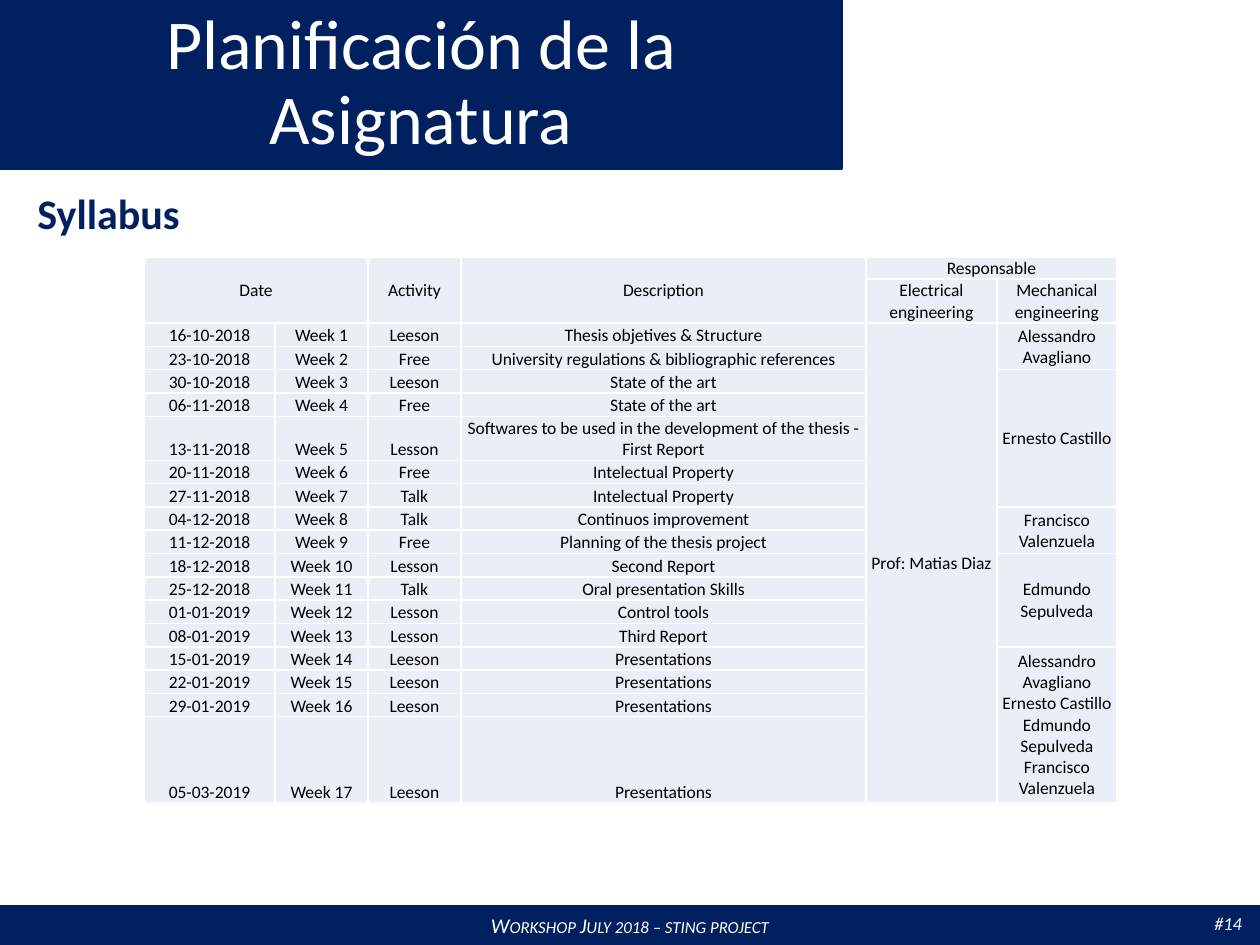
import lxml.etree
import pptx
import pptx.dml.color
import pptx.enum.shapes
import pptx.enum.text
import pptx.oxml.ns
import pptx.util

EMU_PER_PX = 914400 / 126
FONT = "Calibri"
COLOURS = {"navy": "002060", "white": "FFFFFF", "black": "000000", "cell": "EAEFF7"}
ALIGN = pptx.enum.text.PP_ALIGN
ANCHOR = pptx.enum.text.MSO_ANCHOR

COLUMN_WIDTHS = [131, 93, 93, 405, 131, 120]
SINGLE_ROW = 350 / 15  # the fifteen one-line weeks share 350 px
ROW_HEIGHTS = [21, 44] + [SINGLE_ROW] * 4 + [44] + [SINGLE_ROW] * 11 + [86]
FIRST_WEEK_ROW = 2

WEEKS = [
    ("16-10-2018", "Leeson", "Thesis objetives & Structure"),
    ("23-10-2018", "Free", "University regulations & bibliographic references"),
    ("30-10-2018", "Leeson", "State of the art"),
    ("06-11-2018", "Free", "State of the art"),
    ("13-11-2018", "Lesson",
     "Softwares to be used in the development of the thesis - First Report"),
    ("20-11-2018", "Free", "Intelectual Property"),
    ("27-11-2018", "Talk", "Intelectual Property"),
    ("04-12-2018", "Talk", "Continuos improvement"),
    ("11-12-2018", "Free", "Planning of the thesis project"),
    ("18-12-2018", "Lesson", "Second Report"),
    ("25-12-2018", "Talk", "Oral presentation Skills"),
    ("01-01-2019", "Lesson", "Control tools"),
    ("08-01-2019", "Lesson", "Third Report"),
    ("15-01-2019", "Leeson", "Presentations"),
    ("22-01-2019", "Leeson", "Presentations"),
    ("29-01-2019", "Leeson", "Presentations"),
    ("05-03-2019", "Leeson", "Presentations"),
]

# Name and number of weeks, from the first week down
MECHANICAL_STAFF = [
    ("Alessandro Avagliano", 2),
    ("Ernesto Castillo", 5),
    ("Francisco Valenzuela", 2),
    ("Edmundo Sepulveda", 4),
    ("Alessandro Avagliano Ernesto Castillo Edmundo Sepulveda Francisco Valenzuela", 4),
]


def px(length):
    return pptx.util.Emu(round(length * EMU_PER_PX))


def colour(name):
    return pptx.dml.color.RGBColor.from_string(COLOURS[name])


def write(frame, text, size, colour_name, align=ALIGN.LEFT, bold=False, italic=False):
    """Fill a text frame with one formatted paragraph and return it."""
    para = frame.paragraphs[0]
    para.text = text
    para.alignment = align
    para.font.name = FONT
    para.font.size = pptx.util.Pt(size)
    para.font.bold = bold
    para.font.italic = italic
    para.font.color.rgb = colour(colour_name)
    return para


def add_band(slide, left, top, width, height):
    band = slide.shapes.add_shape(
        pptx.enum.shapes.MSO_SHAPE.RECTANGLE, px(left), px(top), px(width), px(height))
    band.shadow.inherit = False
    band.fill.solid()
    band.fill.fore_color.rgb = colour("navy")
    band.line.color.rgb = colour("navy")
    band.line.width = pptx.util.Pt(1)
    return band


def add_label(slide, left, top, width, height, text, size, colour_name, **style):
    box = slide.shapes.add_textbox(px(left), px(top), px(width), px(height))
    box.text_frame.word_wrap = False
    write(box.text_frame, text, size, colour_name, **style)


def add_title(slide, text):
    add_band(slide, 0, 0, 842, 169)
    title = slide.shapes.title
    slide.shapes._spTree.append(title._element)  # bring in front of the band
    title.left, title.top, title.width, title.height = px(0), px(0), px(842), px(169)
    frame = title.text_frame
    frame.auto_size = pptx.enum.text.MSO_AUTO_SIZE.NONE
    frame.word_wrap = True
    frame.vertical_anchor = ANCHOR.MIDDLE
    write(frame, text, 40, "white", ALIGN.CENTER).line_spacing = 0.9


def add_footer(slide, text, page_number):
    band = add_band(slide, 0, 906, 1260, 39)
    band.text_frame.vertical_anchor = ANCHOR.MIDDLE
    para = write(band.text_frame, text, 12, "white", ALIGN.CENTER, italic=True)
    para.runs[0].font._element.set("cap", "small")
    add_label(slide, 1202, 906, 67, 35, page_number, 10.5, "white", italic=True)


def style_cell(cell):
    cell.margin_left = cell.margin_right = cell.margin_top = px(1)
    cell.margin_bottom = 0
    properties = cell._tc.get_or_add_tcPr()
    for side in ("a:lnL", "a:lnR", "a:lnT", "a:lnB"):
        line = lxml.etree.SubElement(
            properties, pptx.oxml.ns.qn(side), w=str(pptx.util.Pt(1)))
        fill = lxml.etree.SubElement(line, pptx.oxml.ns.qn("a:solidFill"))
        lxml.etree.SubElement(fill, pptx.oxml.ns.qn("a:srgbClr"), val=COLOURS["white"])
    cell.fill.solid()
    cell.fill.fore_color.rgb = colour("cell")


def fill_cell(table, row, column, text, anchor=ANCHOR.MIDDLE, rows=1, columns=1):
    """Write a cell, merged over the given number of rows and columns."""
    cell = table.cell(row, column)
    if rows > 1 or columns > 1:
        cell.merge(table.cell(row + rows - 1, column + columns - 1))
    cell.vertical_anchor = anchor
    write(cell.text_frame, text, 10, "black", ALIGN.CENTER)


def add_syllabus_table(slide):
    table = slide.shapes.add_table(
        len(ROW_HEIGHTS), len(COLUMN_WIDTHS), px(144), px(257),
        px(sum(COLUMN_WIDTHS)), px(sum(ROW_HEIGHTS))).table
    table.first_row = table.horz_banding = False
    for column, width in zip(table.columns, COLUMN_WIDTHS):
        column.width = px(width)
    for row, height in zip(table.rows, ROW_HEIGHTS):
        row.height = px(height)
    for cell in table.iter_cells():
        style_cell(cell)
        cell.text_frame.paragraphs[0].font.size = pptx.util.Pt(10)

    fill_cell(table, 0, 0, "Date", rows=2, columns=2)
    fill_cell(table, 0, 2, "Activity", rows=2)
    fill_cell(table, 0, 3, "Description", rows=2)
    fill_cell(table, 0, 4, "Responsable", ANCHOR.BOTTOM, columns=2)
    fill_cell(table, 1, 4, "Electrical engineering")
    fill_cell(table, 1, 5, "Mechanical engineering")

    for number, (date, activity, description) in enumerate(WEEKS, start=1):
        row = FIRST_WEEK_ROW + number - 1
        for column, text in enumerate((date, f"Week {number}", activity, description)):
            fill_cell(table, row, column, text, ANCHOR.BOTTOM)

    fill_cell(table, FIRST_WEEK_ROW, 4, "Prof: Matias Diaz", rows=len(WEEKS))
    row = FIRST_WEEK_ROW
    for name, weeks in MECHANICAL_STAFF:
        fill_cell(table, row, 5, name, rows=weeks)
        row += weeks


def main():
    deck = pptx.Presentation()
    deck.slide_width, deck.slide_height = px(1260), px(945)
    slide = deck.slides.add_slide(deck.slide_layouts.get_by_name("Title Only"))
    add_title(slide, "Planificación de la Asignatura")
    add_footer(slide, "Workshop July 2018 – sting project", "#14")
    add_label(slide, 25, 181, 169, 63, "Syllabus", 24, "navy", bold=True)
    add_syllabus_table(slide)
    deck.save("out.pptx")


if __name__ == "__main__":
    main()
